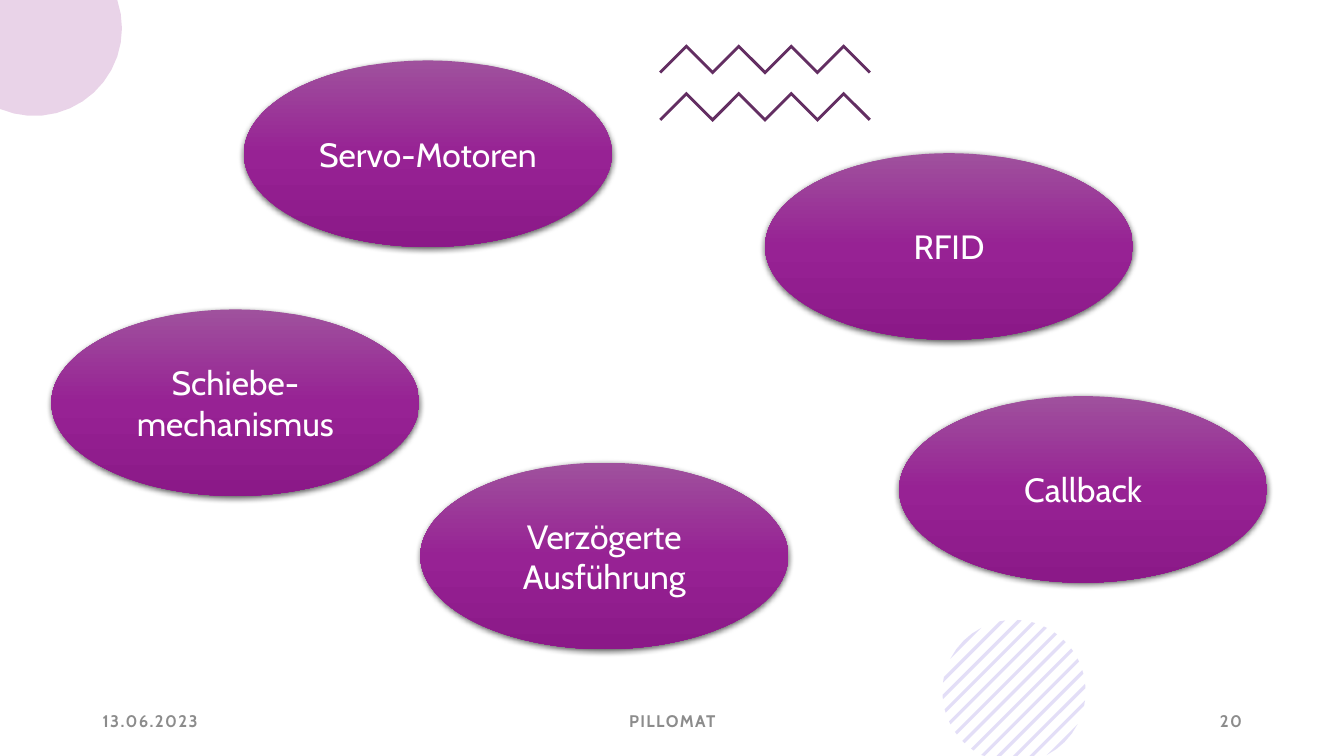
from math import acos, asin, cos, pi, sin

from lxml.etree import SubElement
from pptx import Presentation
from pptx.dml.color import RGBColor
from pptx.enum.shapes import MSO_SHAPE
from pptx.enum.text import MSO_ANCHOR, PP_ALIGN
from pptx.oxml import parse_xml
from pptx.oxml.ns import nsdecls, qn
from pptx.util import Inches, Pt

PX = Inches(0.01)
SLIDE_HEIGHT = 750

COLORS = {
    "zigzag": "632E62",
    "stripe": "755DD9",
    "corner": "92278F",
    "footer": "8C8C8C",
    "topic": "FFFFFF",
    "shadow": "000000",
}
TOPIC_GRADIENT = {0: "9F519D", 50: "972294", 100: "8B1988"}

TOPIC_SIZE = (365, 185)
TOPICS = [
    ("Servo-Motoren", 242, 60),
    ("Schiebe-mechanismus", 51, 307),
    ("RFID", 759, 152),
    ("Callback", 892, 393),
    ("Verzögerte Ausführung", 417, 459),
]
FOOTERS = [
    ("13.06.2023", 92, 300, PP_ALIGN.LEFT),
    ("PILLOMAT", 442, 450, PP_ALIGN.CENTER),
    ("20", 942, 300, PP_ALIGN.RIGHT),
]
TOPIC_FONT = {"name": "Cabin", "size": Pt(24), "bold": False}
FOOTER_FONT = {"name": "Cabin", "size": Pt(12), "bold": True}


def emu(*lengths):
    return [round(length * PX) for length in lengths]


def write_text(shape, text, align, font_format, color):
    frame = shape.text_frame
    frame.word_wrap = True
    frame.vertical_anchor = MSO_ANCHOR.MIDDLE
    paragraph = frame.paragraphs[0]
    paragraph.alignment = align
    run = paragraph.add_run()
    run.text = text
    for attribute, value in font_format.items():
        setattr(run.font, attribute, value)
    run.font.color.rgb = RGBColor.from_string(COLORS[color])
    return run


def add_outline(slide, points, color, opacity=100):
    """Fill the closed polygon through the points, given in px."""
    first, *rest = [emu(*point) for point in points]
    builder = slide.shapes.build_freeform(*first, scale=1.0)
    builder.add_line_segments(rest, close=True)
    outline = builder.convert_to_shape()
    outline.shadow.inherit = False
    outline.line.fill.background()
    outline.fill.solid()
    outline.fill.fore_color.rgb = RGBColor.from_string(COLORS[color])
    if opacity < 100:
        tint = outline._element.spPr.find(qn("a:solidFill"))[0]
        SubElement(tint, qn("a:alpha"), val=str(opacity * 1000))


def add_zigzag(slide, left, top, leg=26, thickness=4, turns=7):
    turning = [(left + leg * (i + 1) + 1, top + leg * (i % 2)) for i in range(turns)]
    right = left + leg * (turns + 1) + 2
    upper = [(left, top + leg + 1), *turning, (right, top + leg + 1)]
    lower = [(left + 2, top + leg + 3),
             *[(x, y + thickness) for x, y in turning],
             (right - 2, top + leg + 3)]
    add_outline(slide, upper + lower[::-1], "zigzag")


def add_corner_disc(slide, center_x, center_y, radius, steps=14):
    """Draw a pale disc cut off by the top left slide corner."""
    start = -asin(center_y / radius)
    sweep = pi - acos(center_x / radius) - start
    angles = [start + sweep * i / steps for i in range(steps + 1)]
    rim = [(center_x + radius * cos(a), center_y + radius * sin(a)) for a in angles]
    add_outline(slide, [(0, 0), *rim], "corner", 20)


def add_striped_disc(slide, center_x, center_y, radius, pitch=11.53, thickness=3.2):
    """Draw diagonal stripes inside a disc, cut off by the slide's lower edge."""
    def rim_point(angle):
        x, y = center_x + radius * cos(angle), center_y + radius * sin(angle)
        overhang = max(0, y - SLIDE_HEIGHT)
        return x + overhang, y - overhang

    for stripe in range(-6, 7):
        near, far = [acos(max(-1, min(1, (stripe * pitch + edge) / radius)))
                     for edge in (-thickness / 2, thickness / 2)]
        if abs(stripe) == 6:
            half = far if stripe < 0 else near
            middle, spread = (pi, pi - near) if stripe < 0 else (0, half)
            turns = [middle + spread * i / 2 for i in range(-2, 3)]
        else:
            turns = [-near, -far, far, near]
        add_outline(slide, [rim_point(pi / 4 + turn) for turn in turns], "stripe", 20) \
            if abs(stripe) < 6 or stripe > 0 else \
            add_outline(slide, [rim_point(pi / 4 + pi + (pi - far) * i / 2)
                                for i in range(-2, 3)], "stripe", 20)


def add_footer(slide, top, height):
    for text, left, width, align in FOOTERS:
        box = slide.shapes.add_textbox(*emu(left, top, width, height))
        run = write_text(box, text, align, FOOTER_FONT, "footer")
        run._r.get_or_add_rPr().set("spc", "100")


def add_topic(slide, text, left, top, width, height):
    topic = slide.shapes.add_shape(MSO_SHAPE.OVAL, *emu(left, top, width, height))
    stops = "".join(f'<a:gs pos="{pos * 1000}"><a:srgbClr val="{color}"/></a:gs>'
                    for pos, color in TOPIC_GRADIENT.items())
    topic._element.spPr.append(parse_xml(
        f'<a:gradFill {nsdecls("a")} rotWithShape="1"><a:gsLst>{stops}</a:gsLst>'
        '<a:lin ang="5400000" scaled="0"/></a:gradFill>'))
    topic.line.fill.background()
    topic.shadow.inherit = False
    topic._element.spPr.find(qn("a:effectLst")).append(parse_xml(
        f'<a:outerShdw {nsdecls("a")} blurRad="{Pt(4.5)}" dist="{Pt(1.5)}" '
        f'dir="5400000" rotWithShape="0"><a:srgbClr val="{COLORS["shadow"]}">'
        '<a:alpha val="63000"/></a:srgbClr></a:outerShdw>'))
    write_text(topic, text, PP_ALIGN.CENTER, TOPIC_FONT, "topic")


def main():
    presentation = Presentation()
    presentation.slide_width = Inches(40 / 3)
    presentation.slide_height = Inches(7.5)
    slide = presentation.slides.add_slide(presentation.slide_layouts[6])
    for top in (44, 91):
        add_zigzag(slide, 654, top)
    add_striped_disc(slide, 1006, 686, 71)
    add_corner_disc(slide, 34, 28, 87)
    add_footer(slide, 695, 40)
    for text, left, top in TOPICS:
        add_topic(slide, text, left, top, *TOPIC_SIZE)
    presentation.save("out.pptx")


if __name__ == "__main__":
    main()
